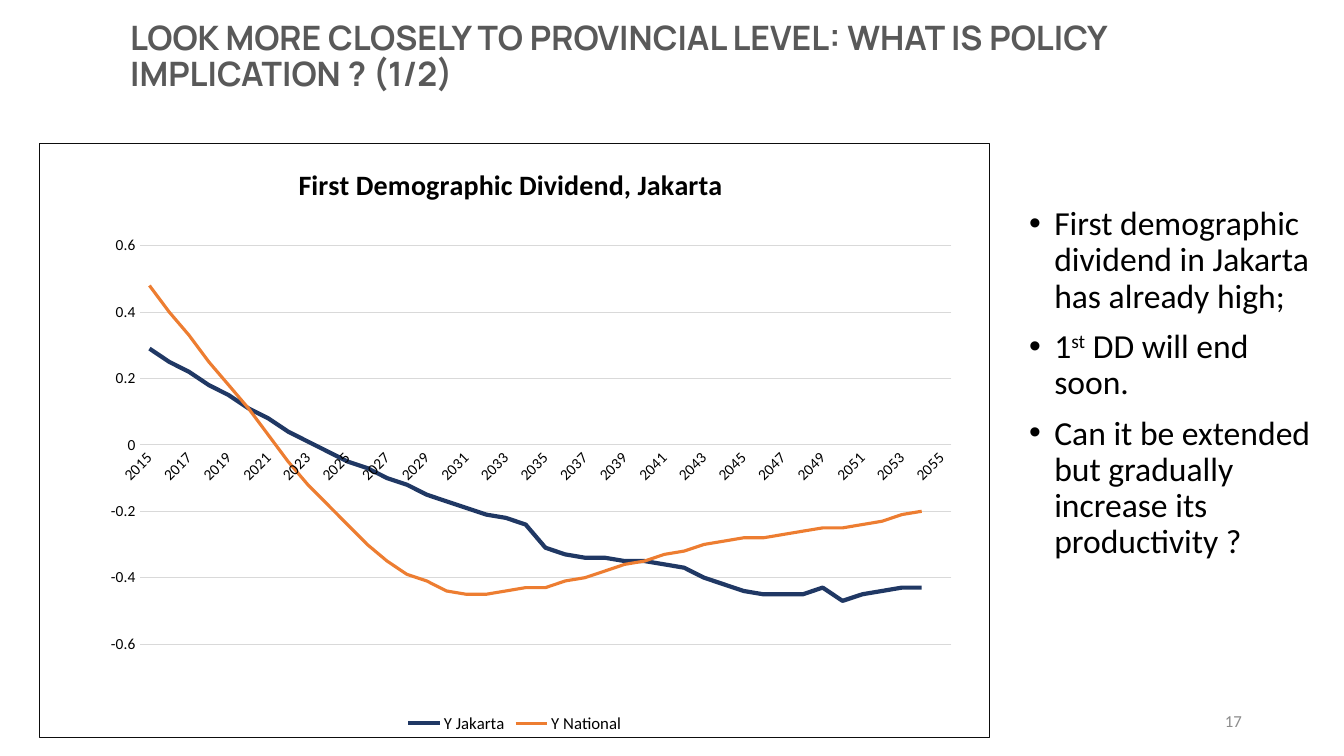
from dataclasses import dataclass
from typing import Any

import lxml.etree
import pptx
import pptx.chart.data
import pptx.dml.color
import pptx.enum.chart
import pptx.enum.text
import pptx.oxml
import pptx.oxml.ns
import pptx.util

WIDE = pptx.util.Inches(13.33)
HIGH = pptx.util.Inches(7.5)


@dataclass(frozen=True)
class Theme:
    head: str = "Manrope"
    face: str = "Calibri"
    ink: str = "000000"
    title: str = "595959"
    page: str = "8C8C8C"
    grid: str = "D9D9D9"
    edge: str = "0D0D0D"
    navy: str = "203864"
    warm: str = "ED7D31"
    big: int = 24
    mid: int = 20
    small: int = 12
    tick: int = 11


@dataclass(frozen=True)
class Box:
    """Left, top, width and height in hundredths of the slide."""
    left: float
    top: float
    width: float
    height: float

    def spans(self) -> list[int]:
        sides = (WIDE, HIGH, WIDE, HIGH)
        shares = (self.left, self.top, self.width, self.height)
        return [round(side * share / 100) for side, share in zip(sides, shares)]


@dataclass(frozen=True)
class Curve:
    name: str
    color: str
    weight: float
    points: list[float | None]


THEME = Theme()
TITLE = "LOOK MORE CLOSELY TO PROVINCIAL LEVEL: WHAT IS POLICY IMPLICATION ? (1/2)"
NOTES = [
    ["First demographic dividend in Jakarta has already high;"],
    ["1", "st", " DD will end soon."],
    ["Can it be extended but gradually increase its productivity ?"],
]
YEARS = [str(year) for year in range(2015, 2056)]
CURVES = [
    Curve("Y Jakarta", THEME.navy, 3, [
        0.29, 0.25, 0.22, 0.18, 0.15, 0.11, 0.08, 0.04, 0.01, -0.02,
        -0.05, -0.07, -0.1, -0.12, -0.15, -0.17, -0.19, -0.21, -0.22, -0.24,
        -0.31, -0.33, -0.34, -0.34, -0.35, -0.35, -0.36, -0.37, -0.4, -0.42,
        -0.44, -0.45, -0.45, -0.45, -0.43, -0.47, -0.45, -0.44, -0.43, -0.43, None]),
    Curve("Y National", THEME.warm, 2.25, [
        0.48, 0.4, 0.33, 0.25, 0.18, 0.11, 0.03, -0.05, -0.12, -0.18,
        -0.24, -0.3, -0.35, -0.39, -0.41, -0.44, -0.45, -0.45, -0.44, -0.43,
        -0.43, -0.41, -0.4, -0.38, -0.36, -0.35, -0.33, -0.32, -0.3, -0.29,
        -0.28, -0.28, -0.27, -0.26, -0.25, -0.25, -0.24, -0.23, -0.21, -0.2, None]),
]


def paint(font: Any, size: int, color: str = THEME.ink,
          face: str = THEME.face, bold: bool = False) -> None:
    font.name = face
    font.size = pptx.util.Pt(size)
    font.bold = bold
    font.color.rgb = pptx.dml.color.RGBColor.from_string(color)


def stroke(line: Any, color: str, weight: float) -> None:
    line.color.rgb = pptx.dml.color.RGBColor.from_string(color)
    line.width = pptx.util.Pt(weight)


def child(node: Any, tag: str, **traits: str) -> Any:
    part = lxml.etree.SubElement(node, pptx.oxml.ns.qn(tag))
    for key, value in traits.items():
        part.set(key, value)
    return part


def pin(node: Any, index: int, **shares: float) -> None:
    for old in node.findall(pptx.oxml.ns.qn("c:layout")):
        node.remove(old)
    layout = child(node, "c:layout")
    node.insert(index, layout)
    manual = child(layout, "c:manualLayout")
    if "w" in shares:
        child(manual, "c:layoutTarget", val="inner")
    for axis in ("x", "y"):
        child(manual, f"c:{axis}Mode", val="edge")
    for key, share in shares.items():
        child(manual, f"c:{key}", val=f"{share / 100:.3f}")


def frame(chart: Any) -> None:
    space = chart._chartSpace
    shape = child(space, "c:spPr")
    child(shape, "a:noFill")
    line = child(shape, "a:ln", w=str(pptx.util.Pt(0.75)))
    child(child(line, "a:solidFill"), "a:srgbClr", val=THEME.edge)
    space.find(pptx.oxml.ns.qn("c:txPr")).addprevious(shape)


def head(slide: Any, box: Box) -> None:
    title = slide.shapes.title
    title.left, title.top, title.width, title.height = box.spans()
    text = title.text_frame
    text.text = TITLE
    text.word_wrap = True
    text.auto_size = pptx.enum.text.MSO_AUTO_SIZE.NONE
    text.vertical_anchor = pptx.enum.text.MSO_ANCHOR.MIDDLE
    line = text.paragraphs[0]
    line.alignment = pptx.enum.text.PP_ALIGN.LEFT
    line.line_spacing = 0.9
    paint(line.runs[0].font, THEME.big, THEME.title, THEME.head, True)


def graph(slide: Any, box: Box) -> None:
    data = pptx.chart.data.CategoryChartData()
    data.categories = YEARS
    for curve in CURVES:
        data.add_series(curve.name, curve.points)
    kind = pptx.enum.chart.XL_CHART_TYPE.LINE
    chart = slide.shapes.add_chart(kind, *box.spans(), data).chart
    paint(chart.font, THEME.tick)
    frame(chart)

    chart.has_title = True
    title = chart.chart_title
    title.text_frame.text = "First Demographic Dividend, Jakarta"
    paint(title.text_frame.paragraphs[0].runs[0].font, THEME.mid, bold=True)
    pin(title._element, 1, x=26.7, y=2.8)
    plot = chart._chartSpace.find(".//" + pptx.oxml.ns.qn("c:plotArea"))
    pin(plot, 0, x=10.5, y=17.2, w=85.5, h=67.1)

    chart.has_legend = True
    chart.legend.position = pptx.enum.chart.XL_LEGEND_POSITION.BOTTOM
    chart.legend.include_in_layout = False
    paint(chart.legend.font, THEME.small)

    across, up = chart.category_axis, chart.value_axis
    for axis in (across, up):
        axis.major_tick_mark = pptx.enum.chart.XL_TICK_MARK.NONE
        axis.minor_tick_mark = pptx.enum.chart.XL_TICK_MARK.NONE
        paint(axis.tick_labels.font, THEME.tick)
    stroke(across.format.line, THEME.grid, 0.75)
    body = across._element.find(".//" + pptx.oxml.ns.qn("a:bodyPr"))
    body.set("rot", "-2700000")
    body.set("vert", "horz")
    skip = pptx.oxml.parse_xml(
        f'<c:tickLblSkip {pptx.oxml.ns.nsdecls("c")} val="2"/>')
    across._element.find(pptx.oxml.ns.qn("c:noMultiLvlLbl")).addprevious(skip)
    up.tick_labels.number_format = "General"
    up.tick_labels.number_format_is_linked = False
    up.format.line.fill.background()
    stroke(up.major_gridlines.format.line, THEME.grid, 0.75)

    for curve, series in zip(CURVES, chart.plots[0].series):
        series.smooth = False
        series.marker.style = pptx.enum.chart.XL_MARKER_STYLE.NONE
        stroke(series.format.line, curve.color, curve.weight)


def notes(slide: Any, box: Box) -> None:
    text = slide.shapes.add_textbox(*box.spans()).text_frame
    text.word_wrap = True
    for index, parts in enumerate(NOTES):
        line = text.add_paragraph() if index else text.paragraphs[0]
        look = line._p.get_or_add_pPr()
        look.set("marL", str(pptx.util.Inches(0.25)))
        look.set("indent", str(pptx.util.Inches(-0.25)))
        child(look, "a:buFont", typeface="Arial")
        child(look, "a:buChar", char="•")
        line.line_spacing = 0.9
        line.space_before = pptx.util.Pt(10 if index else 0)
        for part in parts:
            run = line.add_run()
            run.text = part
            paint(run.font, THEME.big)
            if part == "st":
                run._r.get_or_add_rPr().set("baseline", "30000")


def page(slide: Any, box: Box) -> None:
    text = slide.shapes.add_textbox(*box.spans()).text_frame
    text.text = "17"
    text.word_wrap = True
    text.vertical_anchor = pptx.enum.text.MSO_ANCHOR.MIDDLE
    line = text.paragraphs[0]
    line.alignment = pptx.enum.text.PP_ALIGN.RIGHT
    paint(line.runs[0].font, THEME.small, THEME.page)


def main() -> None:
    deck = pptx.Presentation()
    deck.slide_width, deck.slide_height = WIDE, HIGH
    slide = deck.slides.add_slide(deck.slide_layouts[5])
    notes(slide, Box(75.83, 26.67, 22.5, 63.47))
    page(slide, Box(70.65, 92.67, 22.5, 5.33))
    graph(slide, Box(2.93, 18.93, 70.73, 78.67))
    head(slide, Box(8.93, 1.33, 74.78, 12.67))
    deck.save("out.pptx")


if __name__ == "__main__":
    main()
